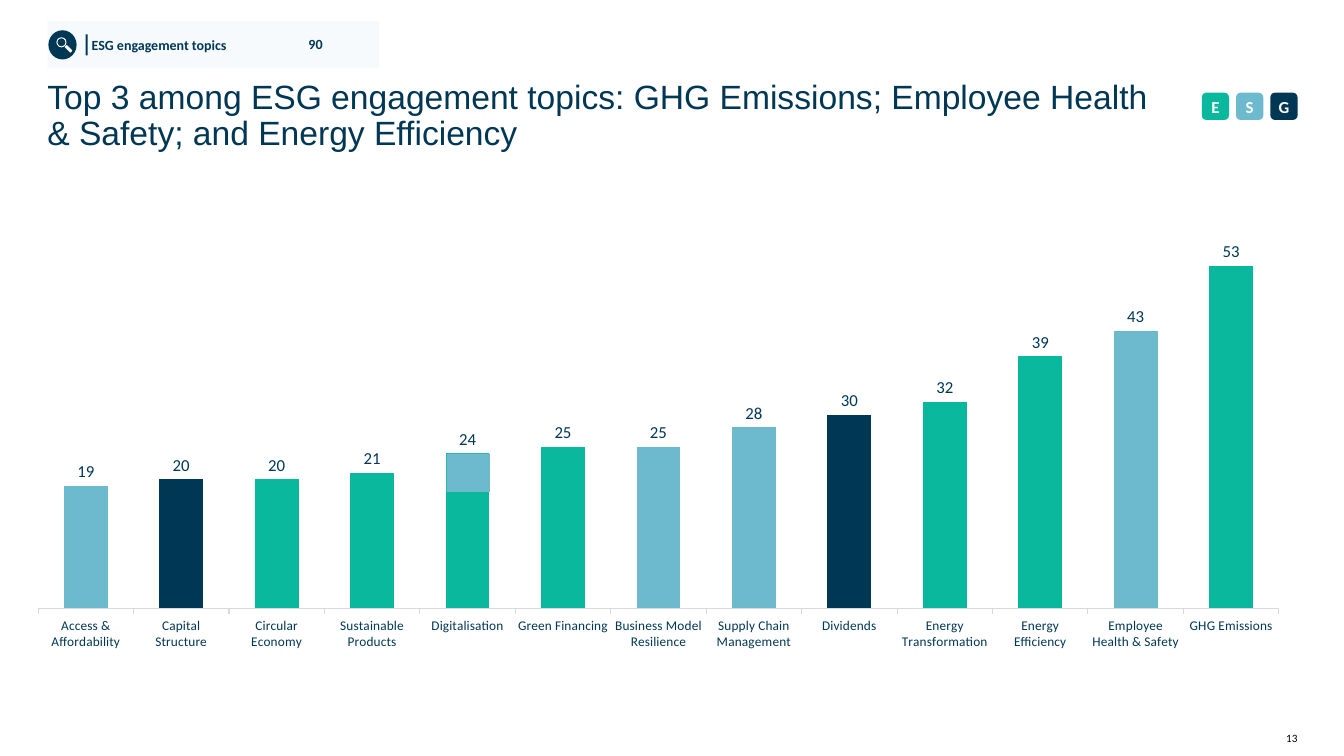
from lxml import etree
from pptx import Presentation
from pptx.chart.data import CategoryChartData
from pptx.dml.color import RGBColor
from pptx.enum.chart import XL_CHART_TYPE as CT, XL_LABEL_POSITION as LP, XL_TICK_MARK as TM
from pptx.enum.shapes import MSO_SHAPE as SH
from pptx.enum.text import MSO_ANCHOR as ANC, PP_ALIGN as AL
from pptx.oxml import parse_xml
from pptx.oxml.ns import nsdecls, qn
from pptx.util import Inches, Pt

NAVY, GREEN, BLUE, WHITE = "003755", "09B89D", "6DBACE", "FFFFFF"
PILLARS = {"E": GREEN, "S": BLUE, "G": NAVY}
TITLE = ("Top 3 among ESG engagement topics: GHG Emissions; "
         "Employee Health & Safety; and Energy Efficiency")
TOPICS = [
    ("GHG Emissions", 53, "E"),
    ("Employee Health & Safety", 43, "S"),
    ("Energy Efficiency", 39, "E"),
    ("Energy Transformation", 32, "E"),
    ("Dividends", 30, "G"),
    ("Supply Chain Management", 28, "S"),
    ("Business Model Resilience", 25, "S"),
    ("Green Financing", 25, "E"),
    ("Digitalisation", 24, "E"),
    ("Sustainable Products", 21, "E"),
    ("Circular Economy", 20, "E"),
    ("Capital Structure", 20, "G"),
    ("Access & Affordability", 19, "S"),
]
PLOT = {"x": 0.003, "y": 0, "w": 0.976, "h": 0.715}


def rgb(value):
    return RGBColor.from_string(value)


def style_font(font, size, color=NAVY, name="Calibri", bold=False):
    font.size, font.name, font.bold = Pt(size), name, bold
    font.color.rgb = rgb(color)


def write(sp, text, size, color=NAVY, name="Calibri", bold=False,
          align=AL.LEFT, anchor=ANC.TOP, spacing=None):
    tf = sp.text_frame
    tf.word_wrap, tf.vertical_anchor = True, anchor
    tf.margin_left = tf.margin_right = tf.margin_top = tf.margin_bottom = 0
    p = tf.paragraphs[0]
    p.alignment, p.line_spacing = align, spacing
    r = p.add_run()
    r.text = text
    style_font(r.font, size, color, name, bold)


def add_text(x, y, w, h, text, size, **fmt):
    sp = s.shapes.add_textbox(Inches(x), Inches(y), Inches(w), Inches(h))
    write(sp, text, size, **fmt)


def add_block(kind, x, y, w, h, color):
    sp = s.shapes.add_shape(kind, Inches(x), Inches(y), Inches(w), Inches(h))
    sp.shadow.inherit = False
    sp.fill.solid()
    sp.fill.fore_color.rgb = rgb(color)
    sp.line.fill.background()
    return sp


prs = Presentation()
prs.slide_width, prs.slide_height = Inches(13.33), Inches(7.5)
s = prs.slides.add_slide(prs.slide_layouts[5])

# Title and page number
title = s.shapes.title
title.left, title.top, title.width, title.height = map(Inches, (0.47, 0.8, 10.96, 0.73))
write(title, TITLE, 24, name="Arial", spacing=0.9)
add_text(12.09, 7.26, 0.78, 0.13, "13", 8, color="000000", align=AL.RIGHT, anchor=ANC.BOTTOM)

# Topic counter with magnifier icon
add_block(SH.RECTANGLE, 0.47, 0.21, 3.29, 0.47, "F7FAFC")
add_block(SH.OVAL, 0.48, 0.3, 0.28, 0.29, NAVY)
lens = add_block(SH.DONUT, 0.56, 0.37, 0.1, 0.1, WHITE)
lens.adjustments[0] = 0.1
handle = add_block(SH.ROUNDED_RECTANGLE, 0.64, 0.47, 0.08, 0.03, WHITE)
handle.rotation = 45
add_block(SH.RECTANGLE, 0.85, 0.34, 0.02, 0.21, NAVY)
add_text(0.91, 0.36, 1.52, 0.17, "ESG engagement topics", 10, bold=True)
add_text(2.7, 0.32, 0.86, 0.26, "90", 10, bold=True, align=AL.CENTER,
         anchor=ANC.MIDDLE, spacing=0.89)

# Column chart, largest topic on the right
data = CategoryChartData()
data.categories = [topic for topic, _, _ in TOPICS]
data.add_series("Series 1", [count for _, count, _ in TOPICS])
chart = s.shapes.add_chart(CT.COLUMN_CLUSTERED, Inches(0.34), Inches(2.19),
                           Inches(12.61), Inches(5.38), data).chart
chart.has_legend = chart.has_title = False
style_font(chart.font, 10, "000000")

cat = chart.category_axis
cat.reverse_order = True
cat.major_tick_mark, cat.minor_tick_mark = TM.OUTSIDE, TM.NONE
cat.format.line.color.rgb = rgb("D9D9D9")
cat.format.line.width = Pt(0.75)
style_font(cat.tick_labels.font, 9.5)
val = chart.value_axis
val.minimum_scale, val.maximum_scale = 0, 60
val.has_major_gridlines = val.visible = False

plot = chart.plots[0]
plot.gap_width, plot.overlap, plot.vary_by_categories = 118, 43, False
series = plot.series[0]
series.format.fill.solid()
series.format.fill.fore_color.rgb = rgb(NAVY)
for i, (_, _, pillar) in enumerate(TOPICS):
    fill = series.points[i].format.fill
    fill.solid()
    fill.fore_color.rgb = rgb(PILLARS[pillar])
labels = series.data_labels
labels.show_value, labels.position = True, LP.OUTSIDE_END
style_font(labels.font, 12)

# Fixed inner plot area
area = chart._chartSpace.chart.plotArea
for old in area.findall(qn("c:layout")):
    area.remove(old)
layout = parse_xml(f"<c:layout {nsdecls('c')}><c:manualLayout/></c:layout>")
settings = {"layoutTarget": "inner", "xMode": "edge", "yMode": "edge", **PLOT}
for tag, value in settings.items():
    etree.SubElement(layout[0], qn(f"c:{tag}")).set("val", str(value))
area.insert(0, layout)

# Social share of the Digitalisation column
add_block(SH.RECTANGLE, 4.43, 4.5, 0.43, 0.38, BLUE)

# Pillar badges
for i, (letter, color) in enumerate(PILLARS.items()):
    badge = add_block(SH.ROUNDED_RECTANGLE, 11.92 + 0.34 * i, 0.92, 0.27, 0.27, color)
    write(badge, letter, 12, color=WHITE, bold=True, align=AL.CENTER, anchor=ANC.MIDDLE)

prs.save("out.pptx")
